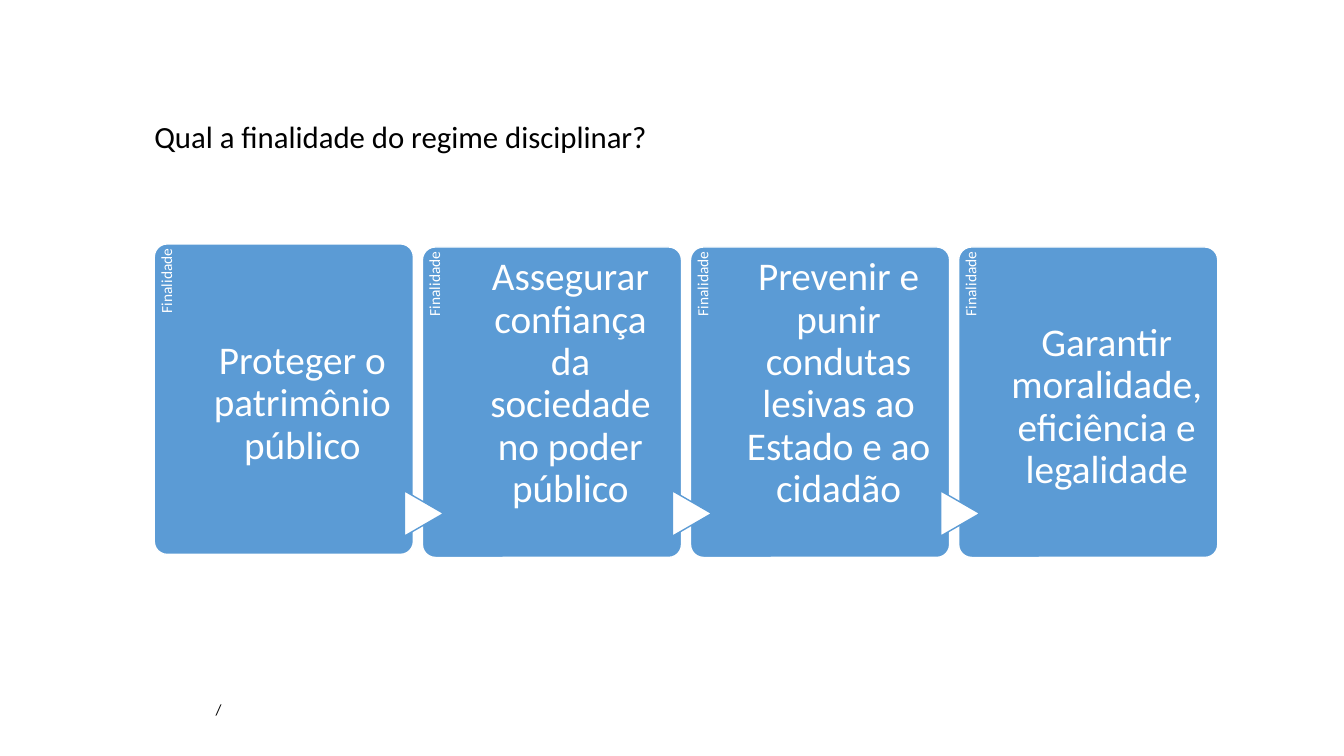
import pptx
import pptx.util
import pptx.dml.color
import pptx.enum.shapes
import pptx.enum.text

SHAPE = pptx.enum.shapes.MSO_SHAPE
ALIGN = pptx.enum.text.PP_ALIGN
ANCHOR = pptx.enum.text.MSO_ANCHOR
INCH = pptx.util.Inches

COLORS = {"blue": "5B9BD5", "white": "FFFFFF", "black": "000000"}
WIDE, HIGH = 13.33, 7.5

# Card grid, in hundredths of the slide's width and height
LEFT, PITCH, CARD_W = 11.48, 19.95, 19.28
TOP, FIRST_TOP, CARD_H = 32.67, 32.27, 41.07

# Aim of each card and its vertical anchor
CARDS = [
    ("Proteger o patrimônio público", ANCHOR.MIDDLE),
    ("Assegurar confiança da sociedade no poder público", ANCHOR.TOP),
    ("Prevenir e punir condutas lesivas ao Estado e ao cidadão", ANCHOR.TOP),
    ("Garantir moralidade, eficiência e legalidade", ANCHOR.MIDDLE),
]


def color(name):
    return pptx.dml.color.RGBColor.from_string(COLORS[name])


def area(x, y, w, h):
    """Turn shares of the slide, in percent, into lengths."""
    return [INCH(part * side / 100)
            for part, side in ((x, WIDE), (y, HIGH), (w, WIDE), (h, HIGH))]


def write(shape, text, size, tint, align=ALIGN.LEFT, anchor=ANCHOR.TOP,
          inset=(0.1, 0.05, 0.1, 0.05), spacing=1.0):
    frame = shape.text_frame
    frame.text = text
    frame.word_wrap = True
    frame.auto_size = pptx.enum.text.MSO_AUTO_SIZE.NONE
    frame.vertical_anchor = anchor
    (frame.margin_left, frame.margin_top,
     frame.margin_right, frame.margin_bottom) = map(INCH, inset)
    line = frame.paragraphs[0]
    line.alignment = align
    line.line_spacing = spacing
    line.space_before = pptx.util.Pt(0)
    font = line.runs[0].font
    font.name = "Calibri"
    font.size = pptx.util.Pt(size)
    font.color.rgb = color(tint)


def add_text(slide, box, text, size, tint, turn=0, **style):
    shape = slide.shapes.add_textbox(*area(*box))
    shape.rotation = turn
    write(shape, text, size, tint, **style)


def add_block(slide, kind, box, fill, edge, turn=0):
    shape = slide.shapes.add_shape(kind, *area(*box))
    shape.shadow.inherit = False
    shape.rotation = turn
    shape.fill.solid()
    shape.fill.fore_color.rgb = color(fill)
    shape.line.color.rgb = color(edge)
    shape.line.width = pptx.util.Pt(1)
    return shape


def add_card(slide, index, text, anchor):
    x = LEFT + index * PITCH
    y = TOP if index else FIRST_TOP
    panel = add_block(slide, SHAPE.ROUNDED_RECTANGLE,
                      (x, y, CARD_W, CARD_H), "blue", "white")
    panel.adjustments[0] = 0.05

    # Side label, turned to read upwards
    add_text(slide, (x - 7.55, y + 13.4, 18.98, 6.8), "Finalidade", 11,
             "white", turn=270, align=ALIGN.RIGHT,
             inset=(0, 0.04, 0.05, 0), spacing=0.9)

    # Arrow from the card before
    if index:
        add_block(slide, SHAPE.FLOWCHART_EXTRACT,
                  (x - 1.57, 65.33, 3.38, 5.2), "white", "blue", turn=90)

    add_text(slide, (x + 3.85, y, 14.33, CARD_H), text, 28, "white",
             align=ALIGN.CENTER, anchor=anchor,
             inset=(0, 0.1, 0, 0), spacing=0.9)


def main():
    deck = pptx.Presentation()
    deck.slide_width, deck.slide_height = INCH(WIDE), INCH(HIGH)
    slide = deck.slides.add_slide(deck.slide_layouts[5])

    # Footer mark
    add_text(slide, (15.3, 92, 69.4, 3.87), "/", 11, "black")

    # Title
    title = slide.shapes.title
    title.left, title.top, title.width, title.height = area(
        10.73, 14.93, 57.1, 20.13)
    write(title, "Qual a finalidade do regime disciplinar?", 22, "black")

    # Chain of cards
    for index, (text, anchor) in enumerate(CARDS):
        add_card(slide, index, text, anchor)

    deck.save("out.pptx")


if __name__ == "__main__":
    main()
